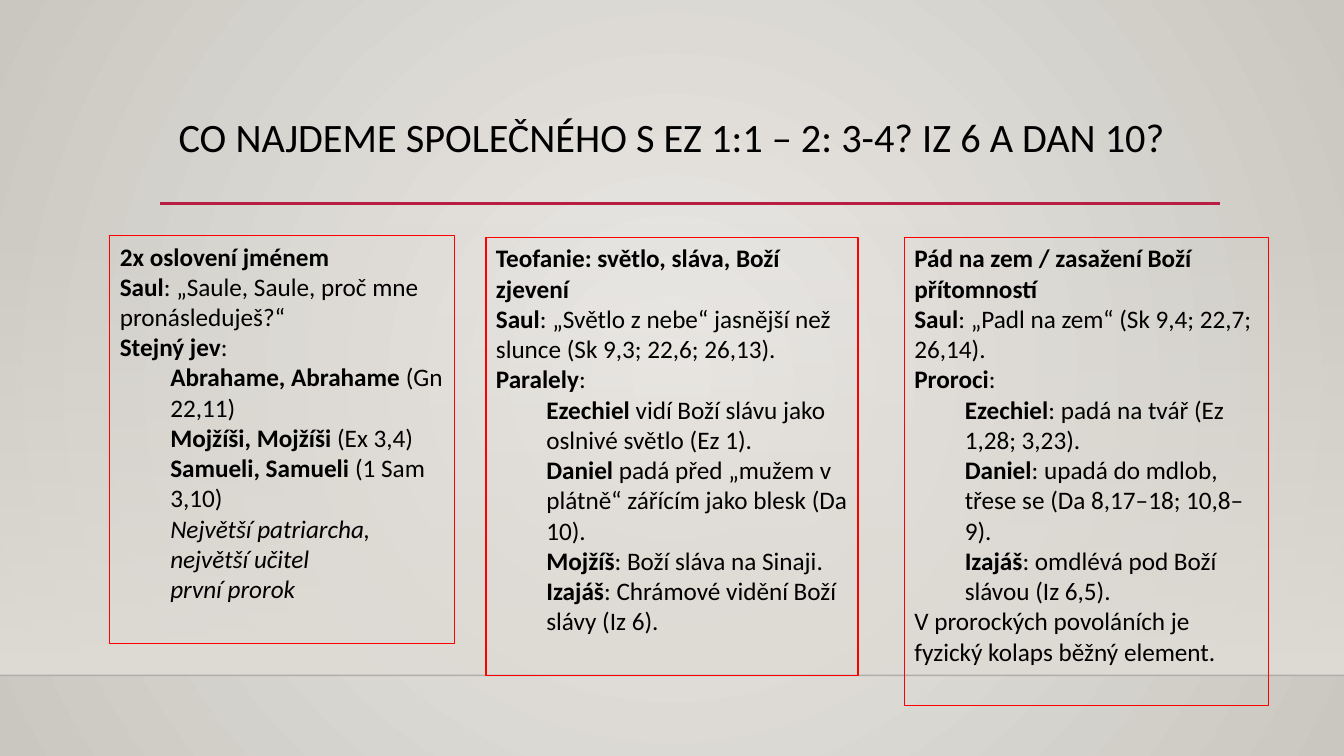
from lxml import etree
from pptx import Presentation
from pptx.dml.color import RGBColor
from pptx.enum import shapes, text
from pptx.oxml import ns
from pptx.util import Inches, Pt

BLACK = RGBColor(0x00, 0x00, 0x00)
RED = RGBColor(0xFF, 0x00, 0x00)
CRIMSON = RGBColor(0xB7, 0x1E, 0x42)
FLOOR = RGBColor(0xDF, 0xDB, 0xD5)
HORIZON = RGBColor(0x00, 0x00, 0x01)
CENTRE = RGBColor(0xEC, 0xEA, 0xE7)
EDGE = RGBColor(0xCA, 0xC7, 0xC1)
FONT = "Calibri"
WIDTH, HEIGHT = 13.33, 7.5
HORIZON_Y = 6.7

TITLE = "CO NAJDEME SPOLEČNÉHO S EZ 1:1 – 2: 3-4? IZ 6 A DAN 10?"

# Each entry: indent level, bold part, regular part, italic part
COLUMNS = [
    ((1.09, 2.34, 3.42, 4.04), [
        (0, "2x oslovení jménem", "", ""),
        (0, "Saul", ": „Saule, Saule, proč mne pronásleduješ?“", ""),
        (0, "Stejný jev", ":", ""),
        (1, "Abrahame, Abrahame", " (Gn 22,11)", ""),
        (1, "Mojžíši, Mojžíši", " (Ex 3,4)", ""),
        (1, "Samueli, Samueli", " (1 Sam 3,10)", ""),
        (1, "", "", "Největší patriarcha,"),
        (1, "", "", "největší učitel"),
        (1, "", "", "první prorok"),
    ]),
    ((4.82, 2.36, 3.69, 4.34), [
        (0, "Teofanie: světlo, sláva, Boží zjevení", "", ""),
        (0, "Saul", ": „Světlo z nebe“ jasnější než slunce (Sk 9,3; 22,6; 26,13).", ""),
        (0, "Paralely", ":", ""),
        (1, "Ezechiel", " vidí Boží slávu jako oslnivé světlo (Ez 1).", ""),
        (1, "Daniel", " padá před „mužem v plátně“ zářícím jako blesk (Da 10).", ""),
        (1, "Mojžíš", ": Boží sláva na Sinaji.", ""),
        (1, "Izajáš", ": Chrámové vidění Boží slávy (Iz 6).", ""),
    ]),
    ((8.97, 2.36, 3.61, 4.64), [
        (0, "Pád na zem / zasažení Boží přítomností", "", ""),
        (0, "Saul", ": „Padl na zem“ (Sk 9,4; 22,7; 26,14).", ""),
        (0, "Proroci", ":", ""),
        (1, "Ezechiel", ": padá na tvář (Ez 1,28; 3,23).", ""),
        (1, "Daniel", ": upadá do mdlob, třese se (Da 8,17–18; 10,8–9).", ""),
        (1, "Izajáš", ": omdlévá pod Boží slávou (Iz 6,5).", ""),
        (0, "", "V prorockých povoláních je fyzický kolaps běžný element.", ""),
    ]),
]


def set_gradient(fill, *colors):
    fill.gradient()
    for position, (stop, color) in enumerate(zip(fill.gradient_stops, colors)):
        stop.position = position
        stop.color.rgb = color


def set_opacity(color_element, percent):
    alpha = etree.SubElement(color_element, ns.qn("a:alpha"))
    alpha.set("val", str(percent * 1000))


def add_rule(slide, left, right, y, color, weight):
    rule = slide.shapes.add_connector(
        shapes.MSO_CONNECTOR.STRAIGHT, Inches(left), Inches(y), Inches(right), Inches(y))
    rule.line.color.rgb = color
    rule.line.width = Pt(weight)
    etree.SubElement(rule.element.spPr, ns.qn("a:effectLst"))
    return rule


def add_rectangle(slide, box):
    rectangle = slide.shapes.add_shape(shapes.MSO_SHAPE.RECTANGLE, *map(Inches, box))
    rectangle.shadow.inherit = False
    return rectangle


def add_backdrop(slide):
    set_gradient(slide.background.fill, CENTRE, EDGE)
    glow = slide.element.find(".//" + ns.qn("a:gradFill"))
    glow.remove(glow.find(ns.qn("a:lin")))
    circle = etree.SubElement(glow, ns.qn("a:path"), path="circle")
    etree.SubElement(circle, ns.qn("a:fillToRect"), l="50000", t="50000", r="50000", b="50000")

    wall = add_rectangle(slide, (0, 2.21, WIDTH, HORIZON_Y - 2.21))
    set_gradient(wall.fill, FLOOR, FLOOR)
    wall.fill.gradient_angle = 270
    wall.line.fill.background()
    set_opacity(wall.element.find(".//" + ns.qn("a:srgbClr")), 0)

    horizon = add_rule(slide, 0, WIDTH, HORIZON_Y, HORIZON, 1)
    set_opacity(horizon.element.find(".//" + ns.qn("a:srgbClr")), 20)


def add_heading(slide, box):
    heading = slide.shapes.title
    heading.left, heading.top, heading.width, heading.height = map(Inches, box)
    frame = heading.text_frame
    frame.text = TITLE
    frame.word_wrap = True
    frame.auto_size = text.MSO_AUTO_SIZE.NONE
    frame.vertical_anchor = text.MSO_ANCHOR.BOTTOM
    frame.margin_bottom = Inches(0.2)
    line = frame.paragraphs[0]
    line.alignment = text.PP_ALIGN.CENTER
    line.line_spacing = 0.9
    line.font.name = FONT
    line.font.size = Pt(28.8)
    line.font.color.rgb = BLACK
    add_rule(slide, 1.59, 12.1, 2.02, CRIMSON, 2.5)


def add_column(slide, box, entries):
    column = add_rectangle(slide, box)
    column.fill.background()
    column.line.color.rgb = RED
    column.line.width = Pt(0.75)
    frame = column.text_frame
    frame.word_wrap = True
    frame.vertical_anchor = text.MSO_ANCHOR.TOP
    for index, (level, bold, regular, italic) in enumerate(entries):
        entry = frame.add_paragraph() if index else frame.paragraphs[0]
        entry.alignment = text.PP_ALIGN.LEFT
        entry.level = level
        properties = entry._p.get_or_add_pPr()
        properties.set("marL", str(Inches(0.5 * level)))
        properties.set("indent", "0")
        entry.font.name = FONT
        entry.font.size = Pt(18)
        entry.font.color.rgb = BLACK
        for part in filter(None, (bold, regular, italic)):
            run = entry.add_run()
            run.text = part
            run.font.bold = part == bold
            run.font.italic = part == italic


def main():
    deck = Presentation()
    deck.slide_width, deck.slide_height = Inches(WIDTH), Inches(HEIGHT)
    slide = deck.slides.add_slide(deck.slide_layouts[5])
    add_backdrop(slide)
    add_heading(slide, (0.92, 0.65, 11.49, 1.15))
    for box, entries in COLUMNS:
        add_column(slide, box, entries)
    deck.save("out.pptx")


if __name__ == "__main__":
    main()
